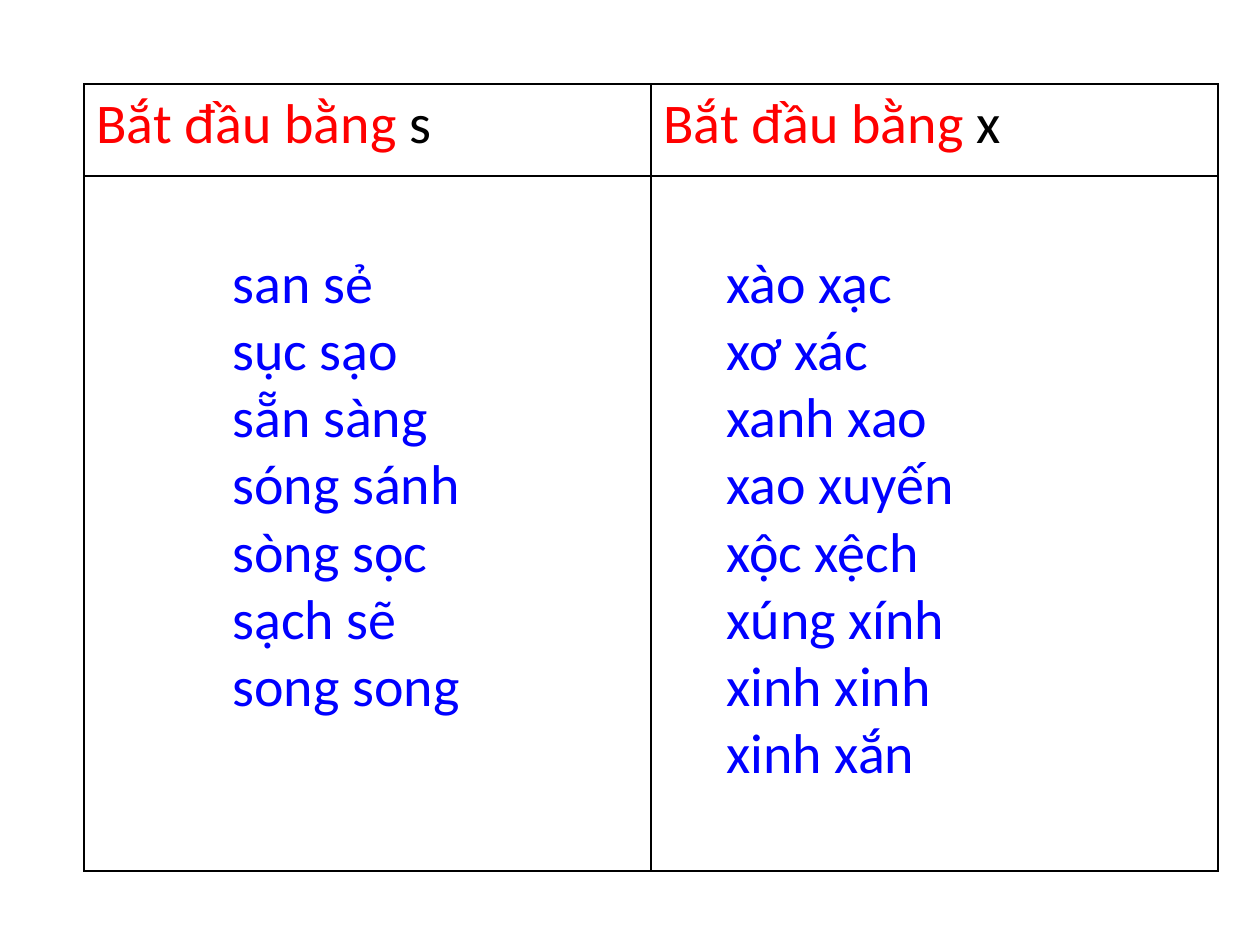
from lxml import etree
from pptx import Presentation
from pptx.dml.color import RGBColor
from pptx.enum.text import MSO_AUTO_SIZE
from pptx.oxml.ns import qn
from pptx.util import Pt

# Content: heading, initial letter, left edge of the word list, words
HEADING = "Bắt đầu bằng "
COLUMNS = [
    ("s", 220, ["san sẻ", "sục sạo", "sẵn sàng", "sóng sánh", "sòng sọc",
                "sạch sẽ", "song song"]),
    ("x", 714, ["xào xạc", "xơ xác", "xanh xao", "xao xuyến", "xộc xệch",
                "xúng xính", "xinh xinh", "xinh xắn"]),
]

# Layout in px, 126 to the inch
PX = 914400 // 126
SLIDE_SIZE = (1260, 945)
TABLE_LEFT, TABLE_TOP = 84, 84
COLUMN_WIDTH = 567
ROW_HEIGHTS = (92, 695)
LIST_TOP, LIST_WIDTH = 241, 325
LINE_HEIGHT, LIST_PADDING = 67, 13

FONT = "Calibri"
FONT_SIZE = Pt(32)
RED = RGBColor(255, 0, 0)
BLUE = RGBColor(0, 0, 255)
BLACK = RGBColor(0, 0, 0)
AUTO_FIT = MSO_AUTO_SIZE.SHAPE_TO_FIT_TEXT


def px(length):
    return length * PX


def add_text(paragraph, text, color, size=FONT_SIZE, font=FONT, bold=False):
    run = paragraph.add_run()
    run.text = text
    run.font.name = font
    run.font.size = size
    run.font.bold = bold
    run.font.color.rgb = color


def set_borders(cell, color=BLACK, width=Pt(1)):
    properties = cell._tc.get_or_add_tcPr()
    for position, side in enumerate(("a:lnL", "a:lnR", "a:lnT", "a:lnB")):
        line = etree.Element(qn(side), w=str(width))
        fill = etree.SubElement(line, qn("a:solidFill"))
        etree.SubElement(fill, qn("a:srgbClr"), val=str(color))
        properties.insert(position, line)


presentation = Presentation()
presentation.slide_width, presentation.slide_height = map(px, SLIDE_SIZE)
slide = presentation.slides.add_slide(presentation.slide_layouts[6])

# Table frame
table = slide.shapes.add_table(
    len(ROW_HEIGHTS), len(COLUMNS), px(TABLE_LEFT), px(TABLE_TOP),
    px(COLUMN_WIDTH * len(COLUMNS)), px(sum(ROW_HEIGHTS))).table
table.first_row = table.horz_banding = False
for row, height in zip(table.rows, ROW_HEIGHTS):
    row.height = px(height)
for cell in table.iter_cells():
    cell.fill.background()
    set_borders(cell)

for index, (letter, left, words) in enumerate(COLUMNS):
    # Column heading
    heading = table.cell(0, index).text_frame.paragraphs[0]
    add_text(heading, HEADING, RED)
    add_text(heading, letter, BLACK)

    # Word list
    height = LINE_HEIGHT * len(words) + LIST_PADDING
    text_frame = slide.shapes.add_textbox(
        px(left), px(LIST_TOP), px(LIST_WIDTH), px(height)).text_frame
    text_frame.word_wrap = True
    text_frame.auto_size = AUTO_FIT
    for number, word in enumerate(words):
        paragraph = text_frame.add_paragraph() if number else text_frame.paragraphs[0]
        add_text(paragraph, word, BLUE)

presentation.save("out.pptx")
